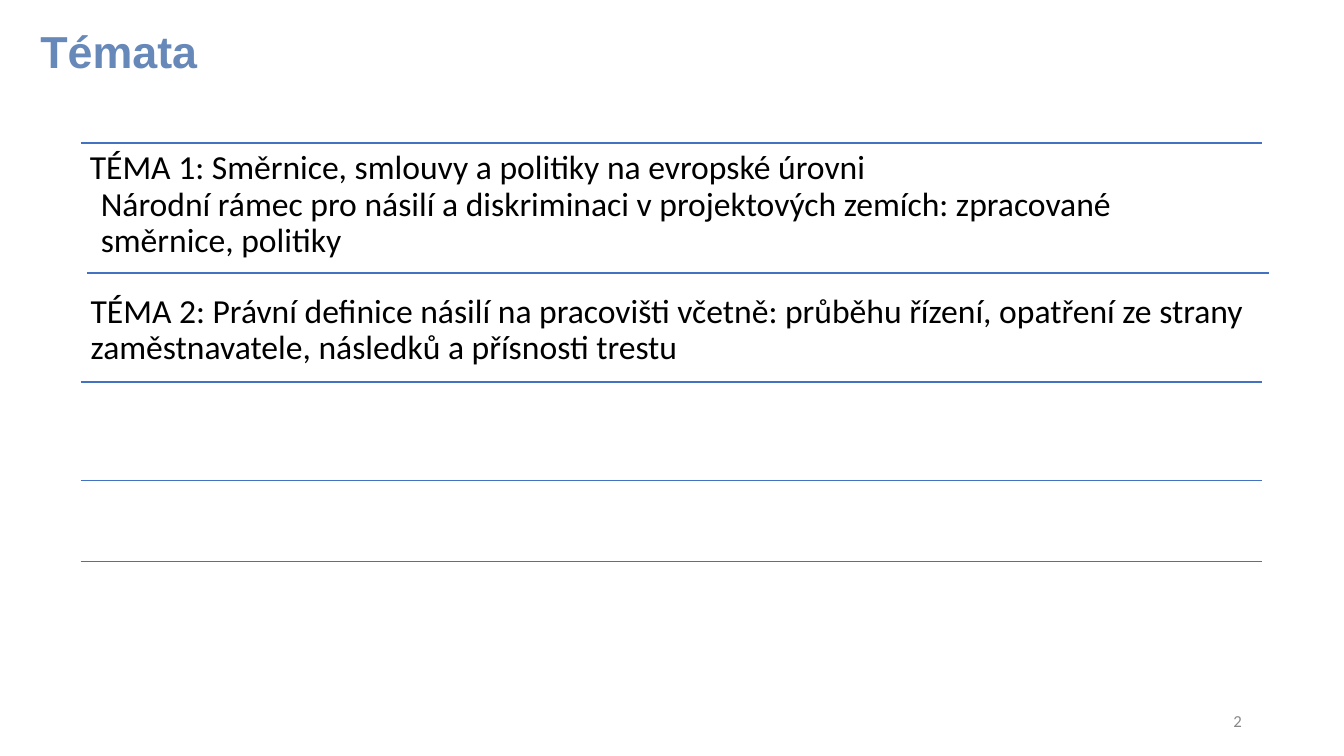
from lxml import etree
from pptx import Presentation
from pptx import util as u
from pptx.dml.color import RGBColor
from pptx.enum import shapes, text
from pptx.oxml.ns import qn


def colour(hex_code):
    return RGBColor.from_string(hex_code)


class TopicSlide:
    """Holds the style and the slide; places are percent of the slide's size."""

    RULE = "4372C3"
    TITLE = {"name": "Arial", "size": u.Pt(32), "bold": True}
    TOPIC = {"name": "Calibri", "size": u.Pt(24)}
    NUMBER = {"name": "Calibri", "size": u.Pt(12)}

    def __init__(self, deck):
        self.width, self.height = deck.slide_width, deck.slide_height
        self.slide = deck.slides.add_slide(deck.slide_layouts[5])

    def x(self, share):
        return round(self.width * share / 100)

    def y(self, share):
        return round(self.height * share / 100)

    def box(self, left, top, width, height):
        return self.x(left), self.y(top), self.x(width), self.y(height)

    def style(self, shape, font, ink, frame, paragraph):
        paragraph_one = shape.text_frame.paragraphs[0]
        for target, values in ((shape.text_frame, frame),
                               (paragraph_one, paragraph),
                               (paragraph_one.font, font)):
            for key, value in values.items():
                setattr(target, key, value)
        paragraph_one.font.color.rgb = colour(ink)

    def frame(self, inset, anchor, side=None):
        margins = {f"margin_{edge}": u.Inches(inset) for edge in ("top", "bottom")}
        margins |= {f"margin_{edge}": u.Inches(side or inset) for edge in ("left", "right")}
        return margins | {"word_wrap": True, "vertical_anchor": anchor,
                          "auto_size": text.MSO_AUTO_SIZE.NONE}

    def title(self, words, place):
        heading = self.slide.shapes.title
        heading.left, heading.top, heading.width, heading.height = self.box(*place)
        heading.text_frame.text = words
        self.style(heading, self.TITLE, "6789B9",
                   self.frame(0.05, text.MSO_ANCHOR.TOP, side=0.1),
                   {"alignment": text.PP_ALIGN.LEFT, "line_spacing": 0.9})

    def topic(self, words, place, inset=0.08, anchor=text.MSO_ANCHOR.TOP, before=0):
        topic = self.slide.shapes.add_textbox(*self.box(*place))
        topic.text_frame.text = words
        self.style(topic, self.TOPIC, "000000", self.frame(inset, anchor),
                   {"line_spacing": 0.9, "space_before": u.Pt(before)})

    def rule(self, left, top, width):
        rule = self.slide.shapes.add_connector(
            shapes.MSO_CONNECTOR.STRAIGHT, self.x(left), self.y(top),
            self.x(left + width), self.y(top))
        rule.line.color.rgb = colour(self.RULE)
        rule.line.width = u.Pt(1)
        etree.SubElement(rule._element.spPr, qn("a:effectLst"))

    def number(self, value, place):
        number = self.slide.shapes.add_textbox(*self.box(*place))
        number.text_frame.text = value
        self.style(number, self.NUMBER, "888888",
                   self.frame(0.05, text.MSO_ANCHOR.MIDDLE, side=0.1),
                   {"alignment": text.PP_ALIGN.RIGHT})
        # Turn the run into a slide number field with the same font
        run = number.text_frame.paragraphs[0].runs[0]
        for key, setting in self.NUMBER.items():
            setattr(run.font, key, setting)
        run.font.color.rgb = colour("888888")
        run._r.tag = qn("a:fld")
        run._r.set("id", "{B6F15528-21DE-4FAA-801E-634DDDAF4B2B}")
        run._r.set("type", "slidenum")


def main():
    deck = Presentation()
    deck.slide_width, deck.slide_height = u.Inches(13.333), u.Inches(7.5)
    topics = TopicSlide(deck)

    # Heading
    topics.title("Témata", (2.25, 3.33, 86.25, 19.33))

    # Rules between the topics; the second sits slightly to the right
    for left, top in ((6, 18.93), (6.5, 36.13), (6, 50.53), (6, 63.6), (6, 74.27)):
        topics.rule(left, top, 87.9)

    # Topics
    topics.topic("TÉMA 1: Směrnice, smlouvy a politiky na evropské úrovni",
                 (6.08, 18.8, 87.98, 21.87))
    topics.topic("Národní rámec pro násilí a diskriminaci v projektových zemích: "
                 "zpracované směrnice, politiky", (6.9, 23.73, 80.63, 12))
    topics.topic("TÉMA 2: Právní definice násilí na pracovišti včetně: průběhu řízení, "
                 "opatření ze strany zaměstnavatele, následků a přísnosti trestu",
                 (6, 36.8, 87.98, 13.87), inset=0.1,
                 anchor=text.MSO_ANCHOR.MIDDLE, before=5.6)

    # Slide number
    topics.number("2", (70.65, 92.67, 22.5, 5.33))
    deck.element.set("firstSlideNum", "2")
    deck.save("out.pptx")


if __name__ == "__main__":
    main()
